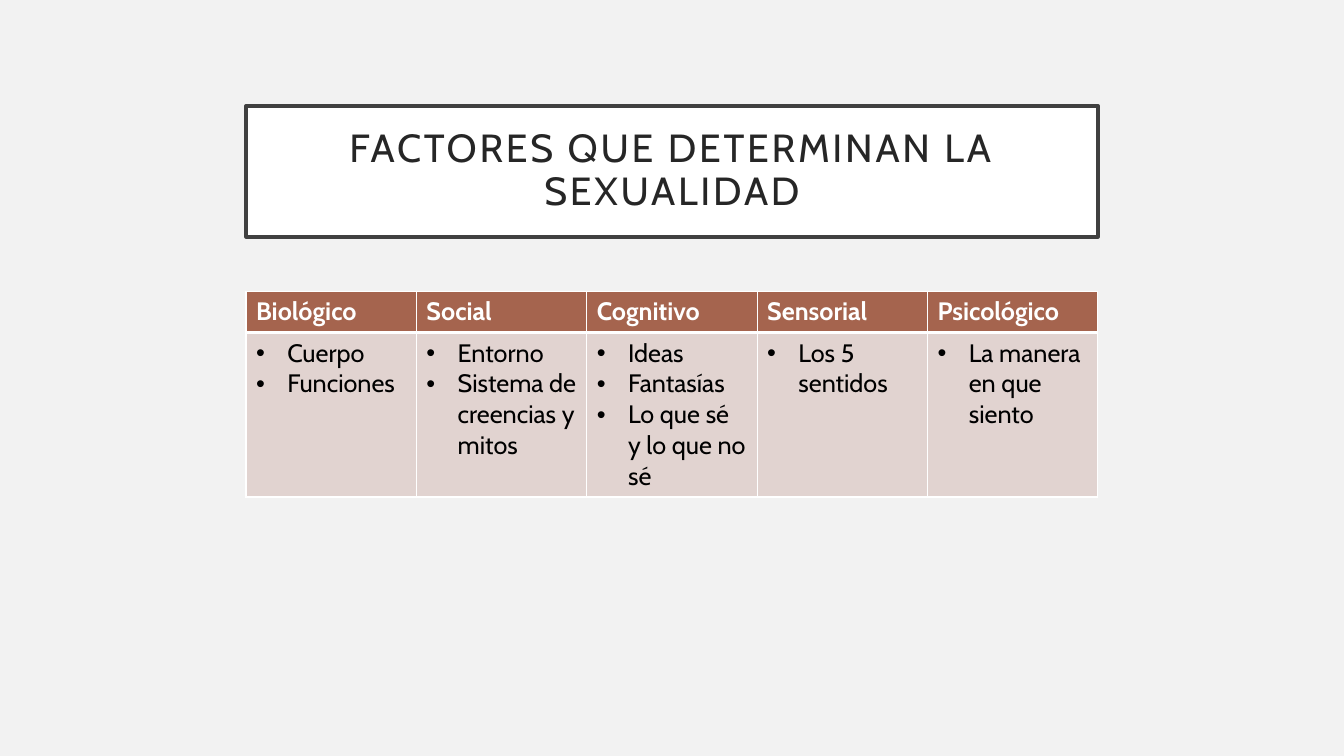
import pptx
import pptx.dml.color
import pptx.enum.text
import pptx.oxml
import pptx.oxml.ns
import pptx.util
from lxml import etree

COLORS = {
    "background": "F2F2F2",
    "white": "FFFFFF",
    "frame": "404040",
    "title": "262626",
    "header": "A5644E",
    "body": "E1D3D0",
    "black": "000000",
}

FACTORS = {
    "Biológico": ["Cuerpo", "Funciones"],
    "Social": ["Entorno", "Sistema de creencias y mitos"],
    "Cognitivo": ["Ideas", "Fantasías", "Lo que sé y lo que no sé"],
    "Sensorial": ["Los 5 sentidos"],
    "Psicológico": ["La manera en que siento"],
}


def px(length):
    return pptx.util.Emu(length * 9144)


def rgb(name):
    return pptx.dml.color.RGBColor.from_string(COLORS[name])


def add_xml(parent, tag, **attributes):
    return etree.SubElement(parent, pptx.oxml.ns.qn(tag), **attributes)


class FactorSlide:
    font_name = "Cabin"

    def __init__(self, presentation):
        self.slide = presentation.slides.add_slide(presentation.slide_layouts[5])
        self.fill(self.slide.background, "background")

    def fill(self, target, color):
        target.fill.solid()
        target.fill.fore_color.rgb = rgb(color)

    def style(self, paragraph, size, color, bold=False):
        font = paragraph.font
        font.name = self.font_name
        font.size = pptx.util.Pt(size)
        font.bold = bold
        font.color.rgb = rgb(color)

    def title(self, text, left, top, width, height):
        title = self.slide.shapes.title
        title.left, title.top = px(left), px(top)
        title.width, title.height = px(width), px(height)
        self.fill(title, "white")
        title.line.color.rgb = rgb("frame")
        title.line.width = pptx.util.Pt(2.5)
        frame = title.text_frame
        frame.word_wrap = True
        frame.auto_size = pptx.enum.text.MSO_AUTO_SIZE.NONE
        frame.vertical_anchor = pptx.enum.text.MSO_ANCHOR.MIDDLE
        frame.margin_left = frame.margin_right = px(20)
        frame.margin_top = frame.margin_bottom = px(20)
        frame.text = text
        heading = frame.paragraphs[0]
        heading.alignment = pptx.enum.text.PP_ALIGN.CENTER
        heading.line_spacing = 0.9
        self.style(heading, 28, "title")
        heading.runs[0]._r.get_or_add_rPr().set("spc", "200")

    def borders(self, cell, top, bottom):
        properties = cell._tc.get_or_add_tcPr()
        for side, points in (("L", 1), ("R", 1), ("T", top), ("B", bottom)):
            line = add_xml(properties, f"a:ln{side}", w=str(pptx.util.Pt(points)))
            solid = add_xml(line, "a:solidFill")
            add_xml(solid, "a:srgbClr", val=COLORS["white"])

    def bullet(self, paragraph):
        properties = paragraph._p.get_or_add_pPr()
        properties.set("marL", str(px(31)))
        properties.set("indent", str(px(-31)))
        add_xml(properties, "a:buFont", typeface="Arial")
        add_xml(properties, "a:buChar", char="•")

    def cell(self, cell, lines, header):
        self.borders(cell, 1 if header else 3, 3 if header else 1)
        self.fill(cell, "header" if header else "body")
        cell.text = "\n".join(lines)
        for paragraph in cell.text_frame.paragraphs:
            if not header:
                self.bullet(paragraph)
            self.style(paragraph, 18, "white" if header else "black", header)

    def table(self, factors, left, top, column_width, row_heights):
        table = self.slide.shapes.add_table(
            len(row_heights), len(factors), px(left), px(top),
            px(column_width * len(factors)), px(sum(row_heights)),
        ).table
        for row, height in zip(table.rows, row_heights):
            row.height = px(height)
        for index, (factor, aspects) in enumerate(factors.items()):
            table.columns[index].width = px(column_width)
            self.cell(table.cell(0, index), [factor], True)
            self.cell(table.cell(1, index), aspects, False)


def main():
    presentation = pptx.Presentation()
    presentation.slide_width = px(1333)
    presentation.slide_height = px(750)
    slide = FactorSlide(presentation)
    slide.title("FACTORES QUE DETERMINAN LA SEXUALIDAD", 244, 105, 845, 130)
    slide.table(FACTORS, 244, 289, 169, (41, 163))
    presentation.save("out.pptx")


if __name__ == "__main__":
    main()
